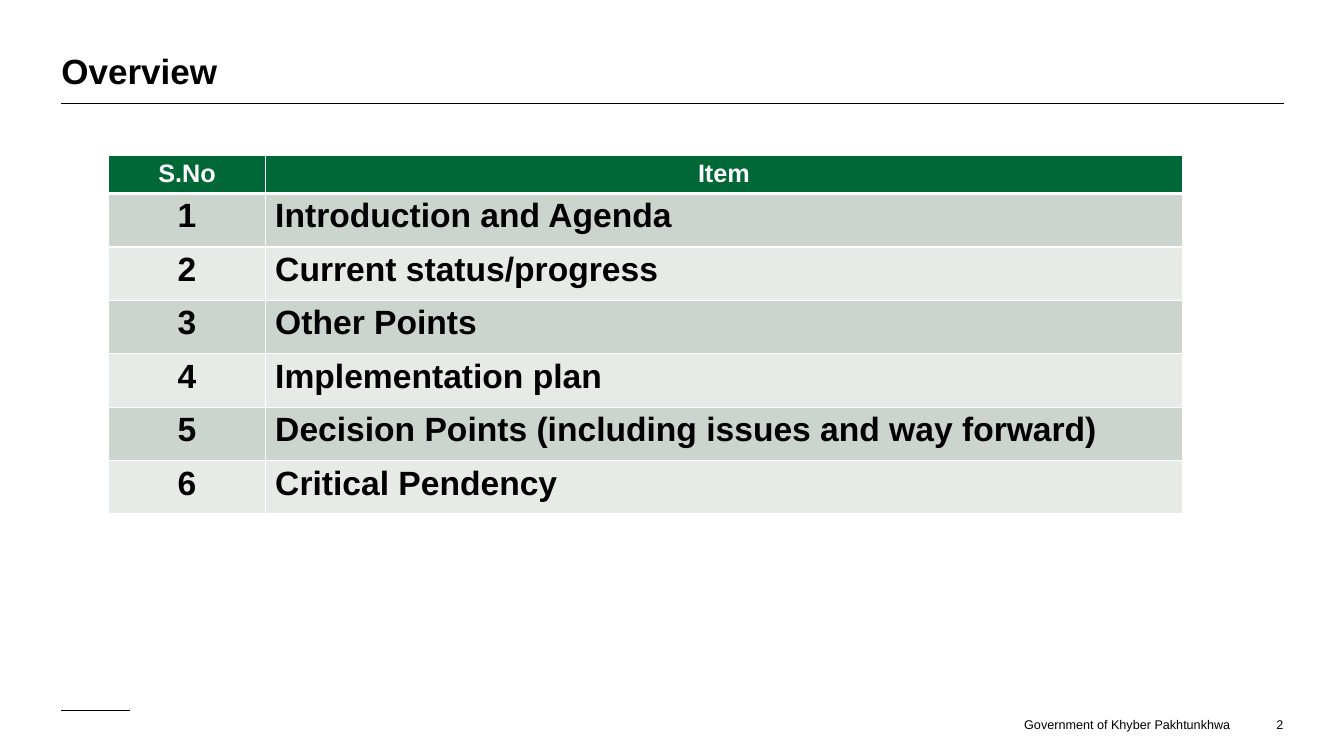
from dataclasses import dataclass

from lxml.etree import SubElement
from pptx import Presentation
from pptx.dml.color import RGBColor
from pptx.enum.shapes import MSO_CONNECTOR
from pptx.enum.text import MSO_ANCHOR, PP_ALIGN
from pptx.oxml.ns import qn
from pptx.slide import Slide
from pptx.table import _Cell
from pptx.text.text import _Paragraph
from pptx.util import Inches, Pt

FONT = "Arial"
BLACK = "000000"
WHITE = "FFFFFF"
GREEN = "006837"
BANDS = ("CCD4CE", "E7EBE8")
LEFT_EDGE = 0.61
RIGHT_EDGE = 12.73
COLUMN_WIDTHS = (1.55, 9.1)
HEADER_HEIGHT = 0.37
ITEM_HEIGHT = 0.53
HEADINGS = ("S.No", "Item")
AGENDA = (
    "Introduction and Agenda",
    "Current status/progress",
    "Other Points",
    "Implementation plan",
    "Decision Points (including issues and way forward)",
    "Critical Pendency",
)


@dataclass(frozen=True)
class Label:
    text: str
    left: float
    top: float
    width: float
    height: float
    size: float = 9
    bold: bool = False
    align: PP_ALIGN = PP_ALIGN.LEFT
    anchor: MSO_ANCHOR = MSO_ANCHOR.BOTTOM
    wrap: bool = True


@dataclass(frozen=True)
class Rule:
    left: float
    right: float
    y: float


@dataclass(frozen=True)
class CellStyle:
    fill: str
    color: str
    size: float
    align: PP_ALIGN
    top_border: float = 1
    bottom_border: float = 1


LABELS = (
    Label("Government of Khyber Pakhtunkhwa", 10.15, 7.11, 2.06, 0.15,
          align=PP_ALIGN.CENTER, anchor=MSO_ANCHOR.MIDDLE, wrap=False),
    Label("2", 12.37, 7.11, 0.36, 0.15, align=PP_ALIGN.RIGHT),
    Label("Overview", LEFT_EDGE, 0.11, 11.11, 0.8, size=25, bold=True),
)
RULES = (Rule(LEFT_EDGE, 1.29, 7.05), Rule(LEFT_EDGE, RIGHT_EDGE, 1.03))


def rgb(value: str) -> RGBColor:
    return RGBColor.from_string(value)


def style_paragraph(paragraph: _Paragraph, size: float, color: str,
                    bold: bool, align: PP_ALIGN) -> None:
    paragraph.alignment = align
    paragraph.font.name = FONT
    paragraph.font.size = Pt(size)
    paragraph.font.bold = bold
    paragraph.font.color.rgb = rgb(color)


def draw_label(slide: Slide, label: Label) -> None:
    box = slide.shapes.add_textbox(Inches(label.left), Inches(label.top),
                                   Inches(label.width), Inches(label.height))
    frame = box.text_frame
    frame.margin_left = frame.margin_right = 0
    frame.margin_top = frame.margin_bottom = 0
    frame.word_wrap = label.wrap
    frame.vertical_anchor = label.anchor
    frame.text = label.text
    style_paragraph(frame.paragraphs[0], label.size, BLACK, label.bold, label.align)


def draw_rule(slide: Slide, rule: Rule) -> None:
    line = slide.shapes.add_connector(
        MSO_CONNECTOR.STRAIGHT, Inches(rule.left), Inches(rule.y),
        Inches(rule.right), Inches(rule.y))
    line.line.color.rgb = rgb(BLACK)
    line.line.width = Pt(0.5)
    SubElement(line._element.spPr, qn("a:effectLst"))


def add_borders(cell: _Cell, style: CellStyle) -> None:
    properties = cell._tc.get_or_add_tcPr()
    widths = {"L": 1, "R": 1, "T": style.top_border, "B": style.bottom_border}
    for side, width in widths.items():
        border = SubElement(properties, qn(f"a:ln{side}"), w=str(Pt(width)))
        fill = SubElement(border, qn("a:solidFill"))
        SubElement(fill, qn("a:srgbClr"), val=WHITE)


def fill_cell(cell: _Cell, text: str, style: CellStyle) -> None:
    add_borders(cell, style)
    cell.fill.solid()
    cell.fill.fore_color.rgb = rgb(style.fill)
    cell.margin_left = cell.margin_right = Inches(0.1)
    cell.margin_top = cell.margin_bottom = Inches(0.04)
    cell.vertical_anchor = MSO_ANCHOR.TOP
    cell.text = text
    style_paragraph(cell.text_frame.paragraphs[0], style.size, style.color,
                    True, style.align)


def draw_agenda(slide: Slide) -> None:
    height = HEADER_HEIGHT + ITEM_HEIGHT * len(AGENDA)
    agenda = slide.shapes.add_table(
        len(AGENDA) + 1, len(HEADINGS), Inches(1.08), Inches(1.54),
        Inches(sum(COLUMN_WIDTHS)), Inches(height)).table
    for column, width in zip(agenda.columns, COLUMN_WIDTHS):
        column.width = Inches(width)
    for index, row in enumerate(agenda.rows):
        row.height = Inches(ITEM_HEIGHT if index else HEADER_HEIGHT)

    heading_style = CellStyle(GREEN, WHITE, 18, PP_ALIGN.CENTER, bottom_border=3)
    for column, heading in enumerate(HEADINGS):
        fill_cell(agenda.cell(0, column), heading, heading_style)

    for number, item in enumerate(AGENDA, start=1):
        band = BANDS[(number - 1) % len(BANDS)]
        top_border = 3 if number == 1 else 1
        entries = ((str(number), PP_ALIGN.CENTER), (item, PP_ALIGN.LEFT))
        for column, (text, align) in enumerate(entries):
            fill_cell(agenda.cell(number, column), text,
                      CellStyle(band, BLACK, 24, align, top_border))


def main() -> None:
    presentation = Presentation()
    presentation.slide_width = Inches(13.33)
    presentation.slide_height = Inches(7.5)
    slide = presentation.slides.add_slide(presentation.slide_layouts[6])
    for rule in RULES:
        draw_rule(slide, rule)
    for label in LABELS:
        draw_label(slide, label)
    draw_agenda(slide)
    presentation.save("out.pptx")


if __name__ == "__main__":
    main()
